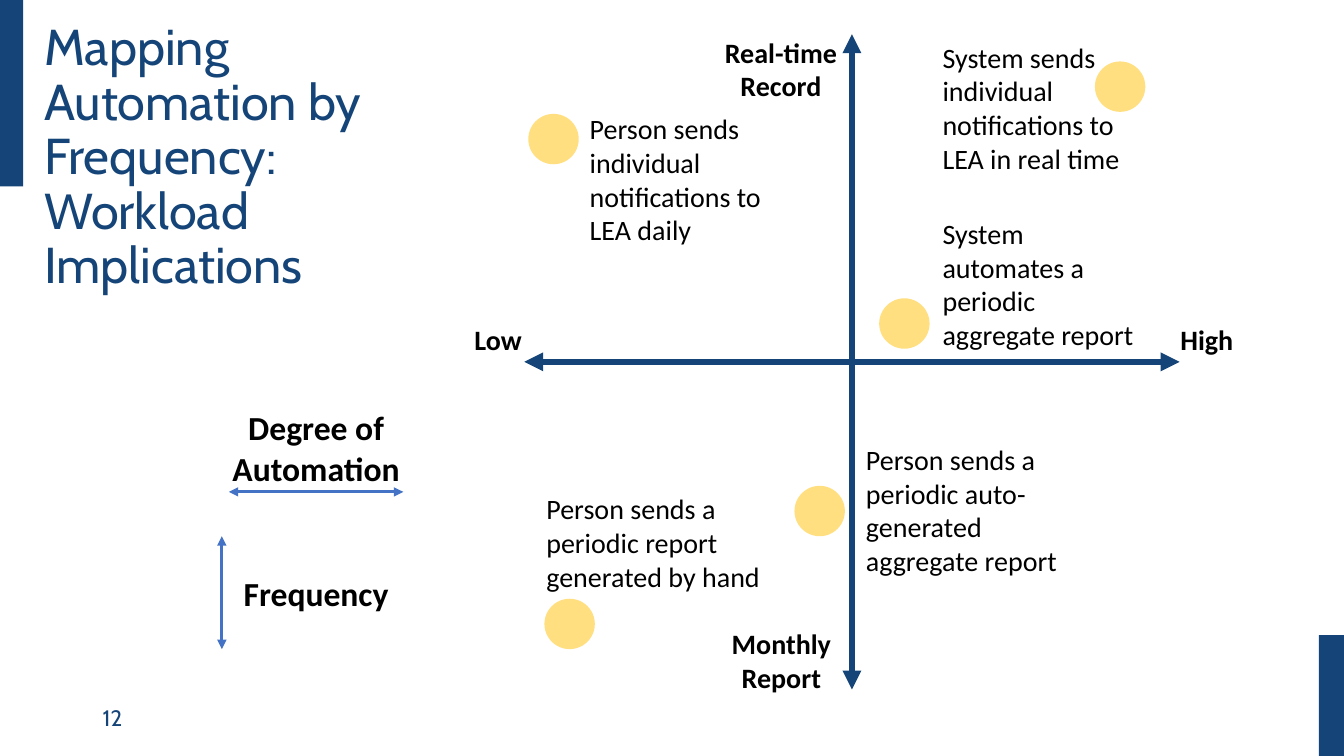
from lxml import etree
from pptx import Presentation
from pptx.dml.color import RGBColor
from pptx.enum.shapes import MSO_CONNECTOR, MSO_SHAPE
from pptx.enum.text import MSO_ANCHOR, MSO_AUTO_SIZE, PP_ALIGN
from pptx.oxml.ns import qn
from pptx.util import Inches, Pt

STRAIGHT = MSO_CONNECTOR.STRAIGHT
RECTANGLE, OVAL = MSO_SHAPE.RECTANGLE, MSO_SHAPE.OVAL
TOP, MIDDLE, BOTTOM = MSO_ANCHOR.TOP, MSO_ANCHOR.MIDDLE, MSO_ANCHOR.BOTTOM
LEFT, CENTER = PP_ALIGN.LEFT, PP_ALIGN.CENTER
GROW = MSO_AUTO_SIZE.SHAPE_TO_FIT_TEXT

NAVY = RGBColor(0x15, 0x45, 0x78)
BLUE = RGBColor(0x44, 0x72, 0xC4)
GOLD = RGBColor(0xFF, 0xC0, 0x00)
BLACK = RGBColor(0, 0, 0)
HEADING_FONT, BODY_FONT = "Cabin", "Calibri"

# Content: boxes are (left, top, width, height) in inches
TITLE = ("Mapping Automation by Frequency: Workload Implications",
         (0.34, 0.14, 4.3, 2.83))
PAGE_NUMBER = ("12", (0.92, 6.92, 3, 0.4))
EDGE_BARS = [(0, 0, 0.23, 1.85), (13.08, 6.3, 0.25, 1.2)]

AXIS_CENTER, AXIS_REACH = (8.45, 3.59), 3.25
AXIS_LABELS = [
    ("Low", (4.36, 3.15, 1.16, 0.44)),
    ("High", (11.39, 3.15, 1.16, 0.44)),
    ("Monthly Report", (7.01, 6.17, 1.48, 0.77)),
    ("Real-time Record", (7.07, 0.3, 1.35, 1.11)),
]
# Legend: label, label box, arrow start, arrow end
LEGEND = [
    ("Degree of Automation", (2.08, 3.99, 2.11, 0.91), (2.27, 4.88), (4, 4.88)),
    ("Frequency", (2.08, 5.63, 2.11, 0.5), (2.2, 5.32), (2.2, 6.44)),
]
# Practices: dot corner, description, description box
DOT_SIZE = 0.5
PRACTICES = [
    ((5.24, 1.13), "Person sends individual notifications to LEA daily",
     (5.65, 1.06, 2.05, 1.45)),
    ((5.4, 5.94), "Person sends a periodic report generated by hand",
     (5.22, 4.83, 2.51, 1.11)),
    ((7.88, 4.82), "Person sends a periodic auto-generated aggregate report",
     (8.39, 4.34, 2.51, 1.45)),
    ((8.72, 2.96), "System automates a periodic aggregate report",
     (9.15, 2.1, 2.31, 1.45)),
    ((10.86, 0.61), "System sends individual notifications to LEA in real time",
     (9.15, 0.35, 2.14, 1.45)),
]

prs = Presentation()
prs.slide_width, prs.slide_height = Inches(13.33), Inches(7.5)
slide = prs.slides.add_slide(prs.slide_layouts[6])


def add_text(text, box, size, font=BODY_FONT, color=BLACK, bold=False,
             align=LEFT, anchor=TOP, spacing=None, indent=0, grow=True):
    frame = slide.shapes.add_textbox(*map(Inches, box)).text_frame
    frame.word_wrap = True
    frame.vertical_anchor = anchor
    if grow:
        frame.auto_size = GROW
    paragraph = frame.paragraphs[0]
    paragraph.alignment = align
    paragraph.line_spacing = spacing
    if indent:
        properties = paragraph._p.get_or_add_pPr()
        properties.set("marL", str(Inches(indent)))
        properties.set("indent", "0")
    run = paragraph.add_run()
    run.text = text
    run.font.name, run.font.size = font, Pt(size)
    run.font.bold = bold
    run.font.color.rgb = color


def add_filled(kind, box, color, opacity=None):
    shape = slide.shapes.add_shape(kind, *map(Inches, box))
    shape.shadow.inherit = False
    shape.line.fill.background()
    shape.fill.solid()
    shape.fill.fore_color.rgb = color
    if opacity is not None:
        rgb = shape._element.spPr.find(".//" + qn("a:srgbClr"))
        etree.SubElement(rgb, qn("a:alpha")).set("val", str(opacity * 1000))


def add_double_arrow(start, end, color, width):
    arrow = slide.shapes.add_connector(STRAIGHT, *map(Inches, start + end))
    arrow.line.color.rgb = color
    arrow.line.width = Pt(width)
    line = arrow.line._get_or_add_ln()
    for tip in ("a:headEnd", "a:tailEnd"):
        etree.SubElement(line, qn(tip)).set("type", "triangle")
    etree.SubElement(arrow._element.spPr, qn("a:effectLst"))


# Frame: page number, edge bars, title
add_text(*PAGE_NUMBER, 16, HEADING_FONT, NAVY, anchor=MIDDLE, grow=False)
for bar in EDGE_BARS:
    add_filled(RECTANGLE, bar, NAVY)
add_text(*TITLE, 36, HEADING_FONT, NAVY, anchor=BOTTOM, spacing=0.9, grow=False)

# Axes crossing at the center
center_x, center_y = AXIS_CENTER
for dx, dy in [(AXIS_REACH, 0), (0, AXIS_REACH)]:
    add_double_arrow((center_x - dx, center_y - dy),
                     (center_x + dx, center_y + dy), NAVY, 4.5)
for label, box in AXIS_LABELS:
    add_text(label, box, 20, bold=True, align=CENTER)

# Legend
for label, box, start, end in LEGEND:
    add_text(label, box, 24, bold=True, align=CENTER)
    add_double_arrow(start, end, BLUE, 2.25)

# Practices placed on the map
for corner, description, box in PRACTICES:
    add_filled(OVAL, corner + (DOT_SIZE, DOT_SIZE), GOLD, opacity=50)
    add_text(description, box, 20, indent=0.1)

prs.save("out.pptx")
